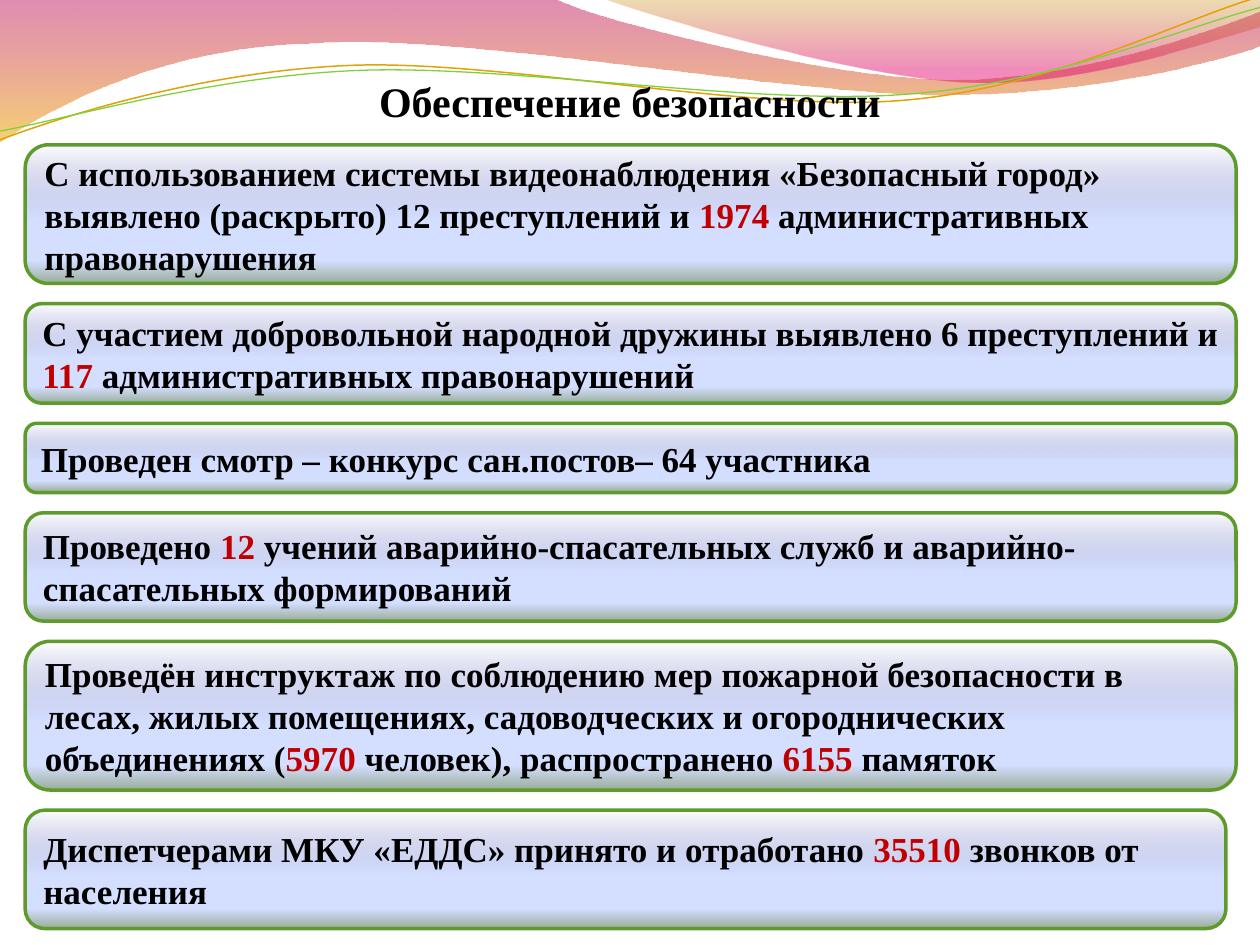
from dataclasses import dataclass
from itertools import chain

from lxml import etree
from pptx import Presentation
from pptx.dml.color import RGBColor
from pptx.enum import shapes, text
from pptx.oxml import ns
from pptx.util import Inches, Pt


@dataclass(frozen=True)
class Stop:
    position: int
    color: str
    opacity: int = 100


@dataclass(frozen=True)
class Theme:
    font: str = "Times New Roman"
    title_size: int = 24
    body_size: int = 20
    ink: str = "000000"
    highlight: str = "C00000"
    border: str = "5E9B2C"
    border_width: float = 2
    panel: tuple = (Stop(0, "8488C4", 0), Stop(53, "D4DEFF"),
                    Stop(83, "D4DEFF"), Stop(100, "96AB94"))
    pink_wave: tuple = (Stop(0, "BD0059", 45), Stop(100, "F0AB00", 55))
    gold_wave: tuple = (Stop(0, "C38B00", 30), Stop(80, "E1006B", 45))
    gold_line: str = "E0A209"
    green_line: str = "7FD13B"


@dataclass(frozen=True)
class Wave:
    """A segment holds one point for a straight line, three for a curve."""
    start: tuple
    segments: tuple
    stops: tuple = ()
    line_color: str = ""
    line_width: float = 0


@dataclass(frozen=True)
class Panel:
    """Text between vertical bars is highlighted."""
    height: float
    content: str
    width: float = 9.61


THEME = Theme()
LEFT, FIRST_TOP, GAP = 0.2, 1.15, 0.16

WAVES = (
    Wave((0, 0), (
        ((4.4, -0.01),),
        ((4.76, 0.17), (6.64, 0.63), (7.58, 0.63)),
        ((8.53, 0.63), (9.58, 0.26), (10, 0.09)),
        ((10.01, 0.36),),
        ((9.83, 0.44), (8.7, 0.76), (7.46, 0.75)),
        ((6.22, 0.75), (3.82, 0.28), (2.57, 0.34)),
        ((1.29, 0.36), (0.46, 0.83), (-0.01, 1.13)),
    ), stops=THEME.pink_wave),
    Wave((4.79, -0.01), (
        ((5.09, 0.11), (6.82, 0.62), (7.69, 0.65)),
        ((8.56, 0.69), (9.61, 0.32), (10, 0.21)),
        ((10, 0),),
    ), stops=THEME.gold_wave),
    Wave((0, 1.11), (
        ((0.48, 0.93), (1.58, 0.57), (2.77, 0.52)),
        ((3.95, 0.47), (5.93, 0.89), (7.13, 0.8)),
        ((8.33, 0.71), (9.38, 0.15), (9.98, -0.02)),
    ), line_color=THEME.gold_line, line_width=0.85),
    Wave((0, 1.04), (
        ((0.47, 0.96), (1.64, 0.61), (2.83, 0.56)),
        ((4.03, 0.51), (5.97, 0.84), (7.17, 0.75)),
        ((8.36, 0.67), (9.41, 0.21), (10, 0.06)),
    ), line_color=THEME.green_line, line_width=0.75),
)

PANELS = (
    Panel(1.1, "С использованием системы видеонаблюдения «Безопасный город» выявлено "
               "(раскрыто) 12 преступлений и |1974| административных правонарушения"),
    Panel(0.79, "С участием добровольной народной дружины выявлено 6 преступлений и "
                "|117| административных правонарушений"),
    Panel(0.55, "Проведен смотр – конкурс сан.постов– 64 участника"),
    Panel(0.86, "Проведено |12| учений аварийно-спасательных служб и "
                "аварийно-спасательных формирований"),
    Panel(1.18, "Проведён инструктаж по соблюдению мер пожарной безопасности в лесах, "
                "жилых помещениях, садоводческих и огороднических объединениях "
                "(|5970 |человек), распространено |6155 |памяток"),
    Panel(0.94, "Диспетчерами МКУ «ЕДДС» принято и отработано |35510 |звонков от населения",
          width=9.53),
)


def fill_gradient(shape, stops: tuple) -> None:
    """Fill from top to bottom, with an opacity for each stop."""
    shape.fill.gradient()
    shape.fill.gradient_angle = 270
    stop_list = shape.element.spPr.find(".//" + ns.qn("a:gsLst"))
    for old_stop in list(stop_list):
        stop_list.remove(old_stop)
    for stop in stops:
        node = etree.SubElement(stop_list, ns.qn("a:gs"), pos=str(stop.position * 1000))
        color = etree.SubElement(node, ns.qn("a:srgbClr"), val=stop.color)
        if stop.opacity < 100:
            etree.SubElement(color, ns.qn("a:alpha"), val=str(stop.opacity * 1000))


def set_line(shape, color: str, width: float) -> None:
    shape.line.color.rgb = RGBColor.from_string(color)
    shape.line.width = Pt(width)


def bend_segments(shape, segments: tuple) -> None:
    """Join each three straight steps of a curve into one Bézier segment."""
    steps = iter(shape.element.spPr.findall(".//" + ns.qn("a:lnTo")))
    for segment in segments:
        group = [next(steps) for _ in segment]
        if len(group) == 3:
            curve = etree.Element(ns.qn("a:cubicBezTo"))
            group[0].addprevious(curve)
            for step in group:
                curve.append(step[0])
                step.getparent().remove(step)


def draw_wave(slide, wave: Wave) -> None:
    points = [(Inches(x), Inches(y)) for x, y in chain.from_iterable(wave.segments)]
    builder = slide.shapes.build_freeform(*map(Inches, wave.start))
    builder.add_line_segments(points, close=bool(wave.stops))
    shape = builder.convert_to_shape()
    shape.shadow.inherit = False
    bend_segments(shape, wave.segments)
    if wave.stops:
        fill_gradient(shape, wave.stops)
        shape.line.fill.background()
    else:
        shape.fill.background()
        set_line(shape, wave.line_color, wave.line_width)


def write_text(shape, content: str, size: int, alignment) -> None:
    frame = shape.text_frame
    frame.word_wrap = True
    frame.vertical_anchor = text.MSO_ANCHOR.MIDDLE
    paragraph = frame.paragraphs[0]
    paragraph.alignment = alignment
    font_values = {"name": THEME.font, "size": Pt(size), "bold": True}
    for index, part in enumerate(content.split("|")):
        run = paragraph.add_run()
        run.text = part
        for name, value in font_values.items():
            setattr(run.font, name, value)
        color = THEME.highlight if index % 2 else THEME.ink
        run.font.color.rgb = RGBColor.from_string(color)


def draw_panel(slide, panel: Panel, top: float) -> None:
    shape = slide.shapes.add_shape(
        shapes.MSO_SHAPE.ROUNDED_RECTANGLE,
        Inches(LEFT), Inches(top), Inches(panel.width), Inches(panel.height))
    shape.shadow.inherit = False
    fill_gradient(shape, THEME.panel)
    set_line(shape, THEME.border, THEME.border_width)
    write_text(shape, panel.content, THEME.body_size, text.PP_ALIGN.LEFT)


def main() -> None:
    presentation = Presentation()
    presentation.slide_width, presentation.slide_height = Inches(10), Inches(7.5)
    slide = presentation.slides.add_slide(presentation.slide_layouts[6])
    for wave in WAVES:
        draw_wave(slide, wave)
    title = slide.shapes.add_textbox(Inches(0), Inches(0.55), Inches(10), Inches(0.5))
    write_text(title, "Обеспечение безопасности", THEME.title_size, text.PP_ALIGN.CENTER)
    top = FIRST_TOP
    for panel in PANELS:
        draw_panel(slide, panel, top)
        top += panel.height + GAP
    presentation.save("out.pptx")


if __name__ == "__main__":
    main()
